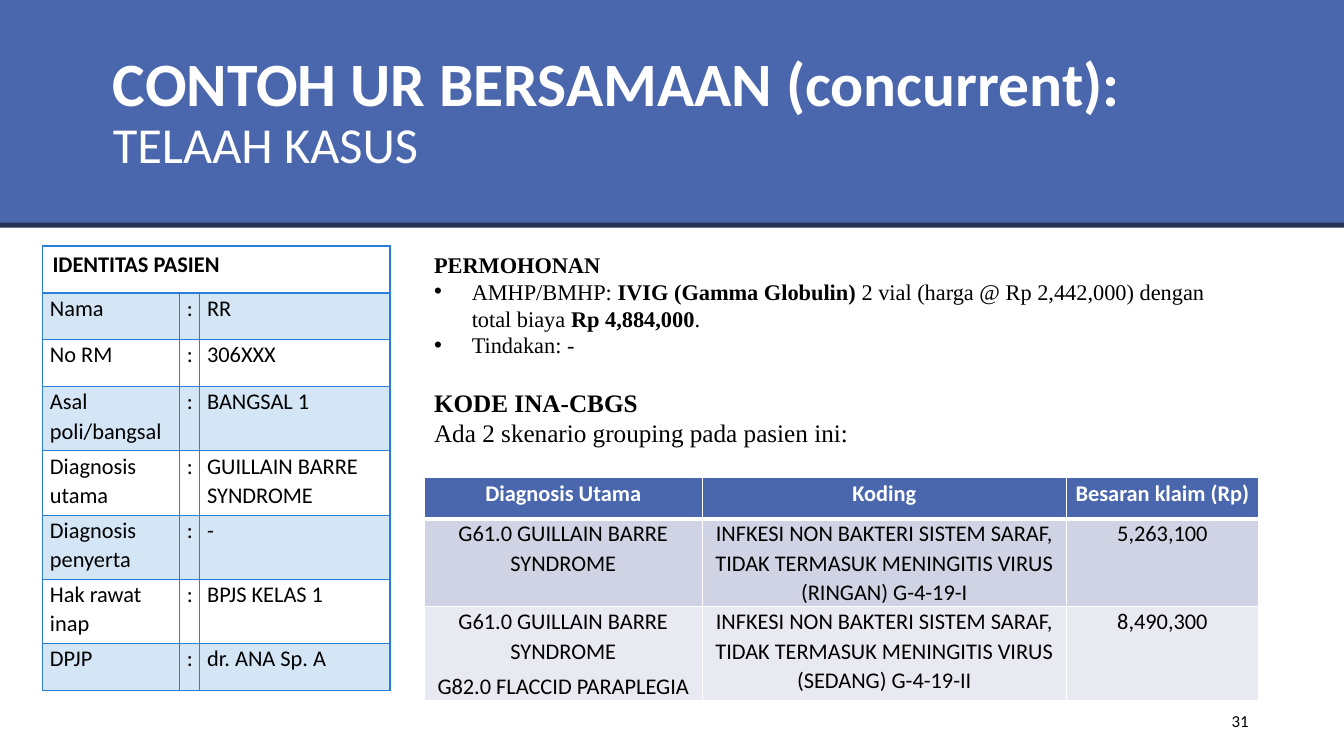
from dataclasses import dataclass

from lxml import etree
from pptx import Presentation
from pptx import util as u
from pptx.dml.color import RGBColor
from pptx.enum import shapes, text
from pptx.oxml import ns

BLUE = RGBColor(0x4A, 0x66, 0xAC)
NAVY = RGBColor(0x25, 0x33, 0x56)
SKY = RGBColor(0x29, 0x7F, 0xD5)
WHITE = RGBColor(0xFF, 0xFF, 0xFF)
BLACK = RGBColor(0, 0, 0)
ROW_DARK = RGBColor(0xD0, 0xD3, 0xE3)
ROW_LIGHT = RGBColor(0xE9, 0xEA, 0xF1)
SANS, SERIF = "Calibri", "Times New Roman"
LEFT, CENTER, RIGHT = text.PP_ALIGN.LEFT, text.PP_ALIGN.CENTER, text.PP_ALIGN.RIGHT
MIDDLE, TOP = text.MSO_ANCHOR.MIDDLE, text.MSO_ANCHOR.TOP


@dataclass
class Span:
    words: str
    bold: bool = False


@dataclass
class Line:
    spans: list[Span]
    bullet: bool = False


@dataclass
class TextBox:
    left: float
    top: float
    width: float
    height: float
    size: float
    font: str
    lines: list[Line]
    align: text.PP_ALIGN = LEFT
    anchor: text.MSO_ANCHOR = TOP


@dataclass
class CellLook:
    border: RGBColor
    bottom: float = 1
    fill: RGBColor | None = None
    alpha: int = 100
    color: RGBColor = BLACK
    bold: bool = False
    align: text.PP_ALIGN = LEFT
    padded: bool = False


def add_span(para, words: str, size: float, font: str, color: RGBColor, bold: bool) -> None:
    span = para.add_run()
    span.text = words
    span.font.name, span.font.size, span.font.bold = font, u.Pt(size), bold
    span.font.color.rgb = color


def add_band(page, top: float, height: float, color: RGBColor) -> None:
    band = page.shapes.add_shape(shapes.MSO_SHAPE.RECTANGLE, 0, u.Cm(top), deck.slide_width, u.Cm(height))
    band.shadow.inherit = False
    band.fill.solid()
    band.fill.fore_color.rgb = color
    band.line.fill.background()


def add_text(page, item: TextBox) -> None:
    box = page.shapes.add_textbox(u.Cm(item.left), u.Cm(item.top), u.Cm(item.width), u.Cm(item.height))
    frame = box.text_frame
    frame.word_wrap = True
    frame.vertical_anchor = item.anchor
    for index, line in enumerate(item.lines):
        para = frame.add_paragraph() if index else frame.paragraphs[0]
        para.alignment = item.align
        if line.bullet:
            props = para._p.get_or_add_pPr()
            props.set("marL", str(u.Cm(0.95)))
            props.set("indent", str(-u.Cm(0.95)))
            etree.SubElement(props, ns.qn("a:buFont")).set("typeface", "Arial")
            etree.SubElement(props, ns.qn("a:buChar")).set("char", "•")
        for span in line.spans:
            add_span(para, span.words, item.size, item.font, BLACK, span.bold)


def add_grid(page, left: float, top: float, widths: list[float], heights: list[float]):
    frame = page.shapes.add_table(len(heights), len(widths), u.Cm(left), u.Cm(top),
                                  u.Cm(sum(widths)), u.Cm(sum(heights)))
    grid = frame.table
    grid.horz_banding = False
    for column, width in zip(grid.columns, widths):
        column.width = u.Cm(width)
    for row, height in zip(grid.rows, heights):
        row.height = u.Cm(height)
    return grid


def format_cell(cell, look: CellLook) -> None:
    props = cell._tc.get_or_add_tcPr()
    for side in "LRTB":
        edge = etree.SubElement(props, ns.qn(f"a:ln{side}"))
        edge.set("w", str(u.Pt(look.bottom if side == "B" else 1)))
        paint = etree.SubElement(edge, ns.qn("a:solidFill"))
        etree.SubElement(paint, ns.qn("a:srgbClr")).set("val", str(look.border))
    if look.fill is None:
        cell.fill.background()
    else:
        cell.fill.solid()
        cell.fill.fore_color.rgb = look.fill
        if look.alpha < 100:
            color = props.find(f"{ns.qn('a:solidFill')}/{ns.qn('a:srgbClr')}")
            etree.SubElement(color, ns.qn("a:alpha")).set("val", str(look.alpha * 1000))
    if not look.padded:
        cell.margin_left = cell.margin_right = u.Cm(0.19)
        cell.margin_top = cell.margin_bottom = 0


def fill_cell(cell, words: str, look: CellLook) -> None:
    format_cell(cell, look)
    for index, line in enumerate(words.split("\n")):
        para = cell.text_frame.add_paragraph() if index else cell.text_frame.paragraphs[0]
        para.alignment = look.align
        if not look.padded:
            para.line_spacing = 1.07
            para.space_after = u.Pt(2)
        if index:
            para.space_before = u.Pt(2)
        add_span(para, line, 16, SANS, look.color, look.bold)


deck = Presentation()
deck.slide_width, deck.slide_height = u.Cm(33.87), u.Cm(19.05)
page = deck.slides.add_slide(deck.slide_layouts[5])

# Header bands, with the title in front of them
add_band(page, 0, 5.69, BLUE)
add_band(page, 5.61, 0.13, NAVY)
title = page.shapes.title
page.shapes._spTree.append(title._element)
title.left, title.top, title.width, title.height = u.Cm(2.59), u.Cm(0.64), u.Cm(26.47), u.Cm(4.45)
title.text_frame.word_wrap = True
title.text_frame.auto_size = text.MSO_AUTO_SIZE.NONE
title.text_frame.vertical_anchor = MIDDLE
heading = title.text_frame.paragraphs[0]
heading.alignment, heading.line_spacing = LEFT, 0.9
add_span(heading, "CONTOH UR BERSAMAAN (concurrent):", 44, SANS, WHITE, True)
heading.add_line_break()
add_span(heading, "TELAAH KASUS", 36, SANS, WHITE, False)

# Patient identity
IDENTITY = [
    ("Nama", "RR"),
    ("No RM", "306XXX"),
    ("Asal poli/bangsal", "BANGSAL 1"),
    ("Diagnosis utama", "GUILLAIN BARRE SYNDROME"),
    ("Diagnosis penyerta", "-"),
    ("Hak rawat inap", "BPJS KELAS 1"),
    ("DPJP", "dr. ANA Sp. A"),
]
SINGLE, DOUBLE = 1.18, 1.62
patient = add_grid(page, 1.07, 6.2, [3.45, 0.51, 4.8], [SINGLE] * 3 + [DOUBLE] * 4 + [SINGLE])
patient_head = CellLook(SKY, bottom=2, bold=True, padded=True)
patient.cell(0, 0).merge(patient.cell(0, 2))
fill_cell(patient.cell(0, 0), "IDENTITAS PASIEN", patient_head)
for column in (1, 2):
    format_cell(patient.cell(0, column), patient_head)
for row, (label, value) in enumerate(IDENTITY, start=1):
    look = CellLook(SKY, fill=SKY if row % 2 else None, alpha=20)
    for column, words in enumerate((label, ":", value)):
        fill_cell(patient.cell(row, column), words, look)

# Claim scenarios
CLAIMS = [
    ("Diagnosis Utama", "Koding", "Besaran klaim (Rp)"),
    ("G61.0 GUILLAIN BARRE SYNDROME",
     "INFKESI NON BAKTERI SISTEM SARAF, TIDAK TERMASUK MENINGITIS VIRUS (RINGAN) G-4-19-I", "5,263,100"),
    ("G61.0 GUILLAIN BARRE SYNDROME\nG82.0 FLACCID PARAPLEGIA",
     "INFKESI NON BAKTERI SISTEM SARAF, TIDAK TERMASUK MENINGITIS VIRUS (SEDANG) G-4-19-II", "8,490,300"),
]
CLAIM_LOOKS = [
    CellLook(WHITE, bottom=3, fill=BLUE, color=WHITE, bold=True, align=CENTER),
    CellLook(WHITE, fill=ROW_DARK, align=CENTER),
    CellLook(WHITE, fill=ROW_LIGHT, align=CENTER),
]
claims = add_grid(page, 10.69, 12.04, [7.01, 9.17, 4.85], [1.03, 2.2, 2.35])
for row, (record, look) in enumerate(zip(CLAIMS, CLAIM_LOOKS)):
    for column, words in enumerate(record):
        fill_cell(claims.cell(row, column), words, look)

# Page number, request and grouping code
BOXES = [
    TextBox(29.54, 17.65, 2.18, 1.02, 12, SANS, [Line([Span("31")])], RIGHT, MIDDLE),
    TextBox(10.69, 6.2, 20.7, 3, 16, SERIF, [
        Line([Span("PERMOHONAN", True)]),
        Line([Span("AMHP/BMHP: "), Span("IVIG (Gamma Globulin)", True),
              Span(" 2 vial (harga @ Rp 2,442,000) dengan total biaya "),
              Span("Rp 4,884,000", True), Span(".")], bullet=True),
        Line([Span("Tindakan: -")], bullet=True),
    ]),
    TextBox(10.69, 9.63, 19.79, 1.8, 18, SERIF, [
        Line([Span("KODE INA-CBGS", True)]),
        Line([Span("Ada 2 skenario grouping pada pasien ini:")]),
    ]),
]
for item in BOXES:
    add_text(page, item)

deck.save("out.pptx")
